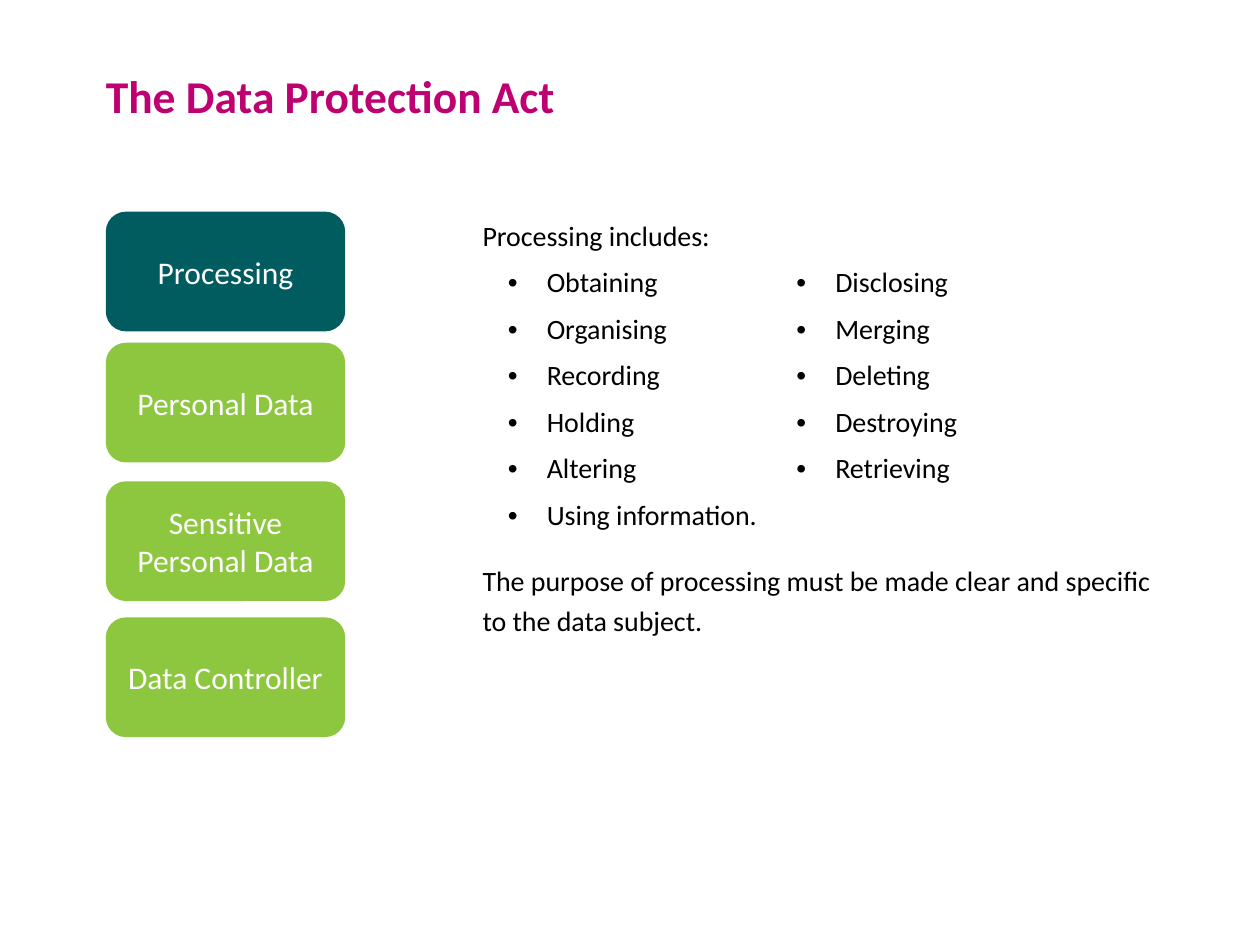
from lxml.etree import SubElement
from pptx import Presentation
from pptx.dml.color import RGBColor
from pptx.enum.shapes import MSO_SHAPE
from pptx.enum.text import MSO_ANCHOR, PP_ALIGN
from pptx.oxml.ns import qn
from pptx.util import Inches, Pt

COLORS = {
    "title": "BE0071",
    "text": "000000",
    "active": "005C5E",
    "topic": "8DC63F",
    "light": "FFFFFF",
}


def write(tf, text, size=16, color="text", bold=False, align=PP_ALIGN.LEFT,
          spacing=None, bullet=False, margin=None):
    """Fill the first paragraph of a text frame; margin applies to all sides."""
    tf.word_wrap = True
    if margin is not None:
        tf.margin_left = tf.margin_right = tf.margin_top = tf.margin_bottom = margin
    p = tf.paragraphs[0]
    if bullet:
        pPr = p._p.get_or_add_pPr()
        pPr.set("marL", str(Inches(0.31)))
        pPr.set("indent", str(-Inches(0.31)))
        SubElement(pPr, qn("a:buFont")).set("typeface", "Arial")
        SubElement(pPr, qn("a:buChar")).set("char", "•")
    p.alignment = align
    if spacing:
        p.line_spacing = spacing
    r = p.add_run()
    r.text = text
    r.font.name = "Calibri"
    r.font.size = Pt(size)
    r.font.bold = bold
    r.font.color.rgb = RGBColor.from_string(COLORS[color])


prs = Presentation()
prs.slide_width, prs.slide_height = Inches(10), Inches(7.5)
s = prs.slides.add_slide(prs.slide_layouts[6])

# Title
title = s.shapes.add_textbox(Inches(0.84), Inches(0.54), Inches(5.34), Inches(0.4))
write(title.text_frame, "The Data Protection Act", size=26, color="title",
      bold=True, margin=0)

# Topic buttons, with the current one highlighted
topics = [
    ("Processing", 1.68, "active"),
    ("Personal Data", 2.72, "topic"),
    ("Sensitive Personal Data", 3.82, "topic"),
    ("Data Controller", 4.9, "topic"),
]
for text, top, fill in topics:
    sp = s.shapes.add_shape(MSO_SHAPE.ROUNDED_RECTANGLE, Inches(0.84), Inches(top),
                            Inches(1.9), Inches(0.95))
    sp.shadow.inherit = False
    sp.fill.solid()
    sp.fill.fore_color.rgb = RGBColor.from_string(COLORS[fill])
    sp.line.fill.background()
    sp.text_frame.vertical_anchor = MSO_ANCHOR.MIDDLE
    write(sp.text_frame, text, size=18, color="light", align=PP_ALIGN.CENTER)

# Sentences above and below the list
sentences = [
    ("Processing includes:", 1.68, 0.35),
    ("The purpose of processing must be made clear and specific "
     "to the data subject.", 4.42, 0.7),
]
for text, top, height in sentences:
    box = s.shapes.add_textbox(Inches(3.83), Inches(top), Inches(5.54), Inches(height))
    write(box.text_frame, text, spacing=1.2, margin=0)

# Kinds of processing in two columns
activities = [
    ("Obtaining", "Disclosing"),
    ("Organising", "Merging"),
    ("Recording", "Deleting"),
    ("Holding", "Destroying"),
    ("Altering", "Retrieving"),
    ("Using information.", ""),
]
table = s.shapes.add_table(len(activities), 2, Inches(3.93), Inches(2.06),
                           Inches(4.65), Inches(2.42)).table
table.first_row = table.horz_banding = False
for column, width in zip(table.columns, (2.29, 2.36)):
    column.width = Inches(width)
for i, pair in enumerate(activities):
    table.rows[i].height = Inches(0.57 if i == len(activities) - 1 else 0.37)
    for j, text in enumerate(pair):
        cell = table.cell(i, j)
        cell.fill.background()
        if text:
            write(cell.text_frame, text, bullet=True)

prs.save("out.pptx")
